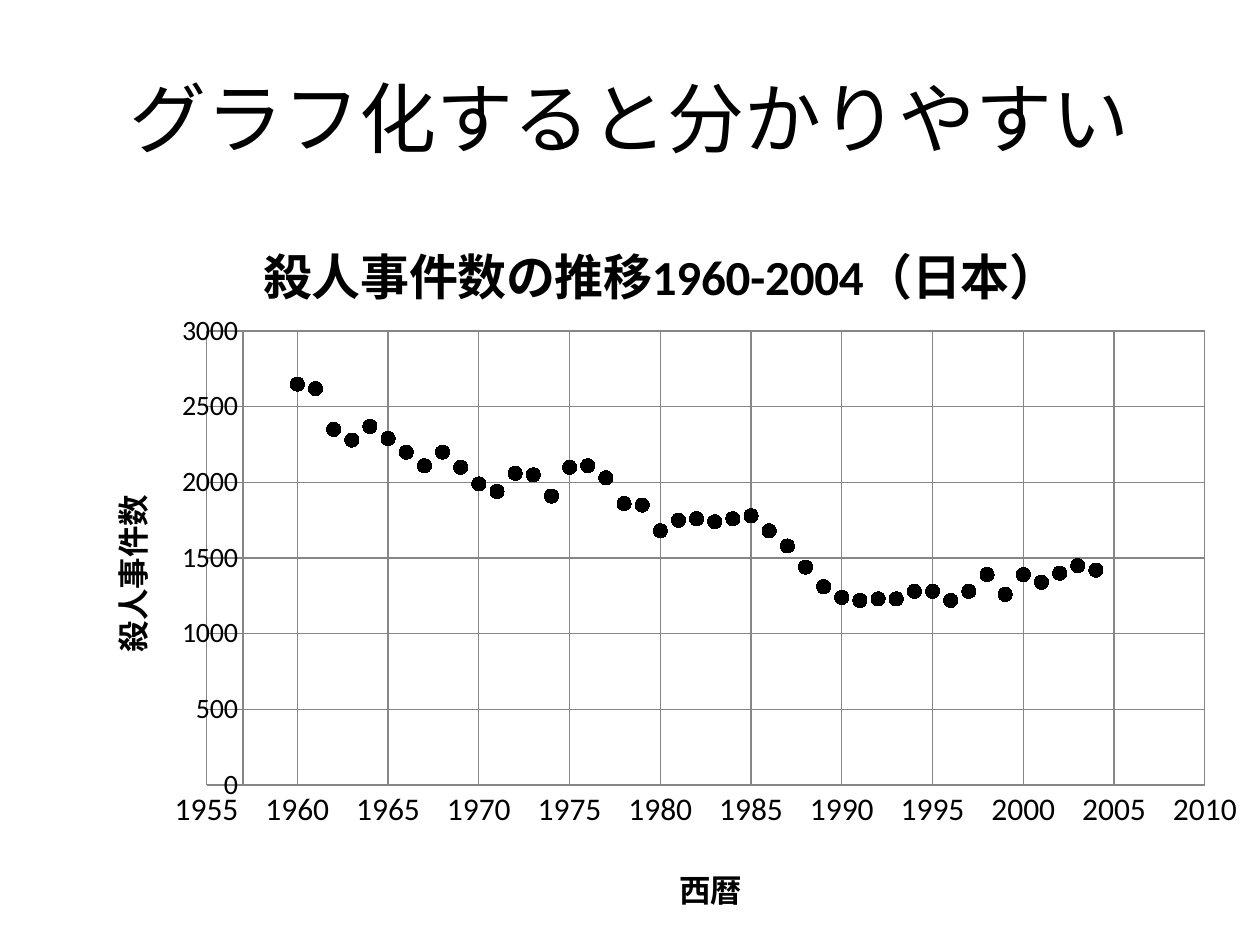
from lxml import etree
from pptx import Presentation
from pptx.chart.data import XyChartData
from pptx.dml.color import RGBColor
from pptx.enum import chart as charts, text
from pptx.oxml.ns import qn
from pptx.util import Inches, Pt

COLORS = {"ink": "000000", "grid": "868686"}
FONT = "Calibri"
FIRST_YEAR = 1960
CASES = [
    2650, 2620, 2350, 2280, 2370, 2290, 2200, 2110, 2200, 2100,
    1990, 1940, 2060, 2050, 1910, 2100, 2110, 2030, 1860, 1850,
    1680, 1750, 1760, 1740, 1760, 1780, 1680, 1580, 1440, 1310,
    1240, 1220, 1230, 1230, 1280, 1280, 1220, 1280, 1390, 1260,
    1390, 1340, 1400, 1450, 1420,
]


def color(name):
    return RGBColor.from_string(COLORS[name])


def format_font(font, size, bold=False):
    font.name = FONT
    font.size = Pt(size)
    font.bold = bold
    font.color.rgb = color("ink")


def write_text(frame, content, size, bold=False):
    paragraph = frame.paragraphs[0]
    paragraph.alignment = text.PP_ALIGN.CENTER
    run = paragraph.add_run()
    run.text = content
    format_font(run.font, size, bold)


def place(element, position, **values):
    """Give a chart part a manual layout, in fractions of the chart."""
    layout = element.find(qn("c:layout"))
    if layout is None:
        layout = etree.Element(qn("c:layout"))
        element.insert(position, layout)
    for child in list(layout):
        layout.remove(child)
    manual = etree.SubElement(layout, qn("c:manualLayout"))
    for tag, value in values.items():
        etree.SubElement(manual, qn("c:" + tag)).set("val", str(value))


def add_chart_title(title, content, size, x, y):
    write_text(title.text_frame, content, size, bold=True)
    place(title._element, 1, xMode="edge", yMode="edge", x=x, y=y)


def format_axis(axis, low, high, step, size):
    axis.minimum_scale, axis.maximum_scale, axis.major_unit = low, high, step
    axis.major_tick_mark = axis.minor_tick_mark = charts.XL_TICK_MARK.NONE
    axis.has_major_gridlines = True
    for line in (axis.major_gridlines.format.line, axis.format.line):
        line.color.rgb = color("grid")
        line.width = Pt(0.75)
    axis.tick_labels.number_format = "General"
    axis.tick_labels.number_format_is_linked = False
    format_font(axis.tick_labels.font, size)


def format_points(series):
    series.smooth = False
    series.format.line.fill.background()
    marker = series.marker
    marker.style = charts.XL_MARKER_STYLE.CIRCLE
    marker.size = 8
    marker.format.fill.solid()
    marker.format.fill.fore_color.rgb = color("ink")
    marker.format.line.color.rgb = color("ink")


def add_scatter_chart(slide):
    data = XyChartData()
    points = data.add_series("殺人事件数")
    for year, cases in enumerate(CASES, FIRST_YEAR):
        points.add_data_point(year, cases)
    chart = slide.shapes.add_chart(
        charts.XL_CHART_TYPE.XY_SCATTER, Inches(0.5), Inches(1.55),
        Inches(9.5), Inches(5.83), data).chart
    chart.has_legend = False
    format_font(chart.font, 10)
    chart.plots[0].vary_by_categories = False
    format_points(chart.plots[0].series[0])

    # Axes; the vertical one stands at 1957
    years, counts = chart.category_axis, chart.value_axis
    format_axis(years, 1955, 2010, 5, 18)
    format_axis(counts, 0, 3000, 500, 16)
    years.crosses_at = 1957

    # Titles
    chart.has_title = True
    add_chart_title(chart.chart_title, "殺人事件数の推移1960-2004（日本）", 28, 0.16, 0.04)
    add_chart_title(years.axis_title, "西暦", 18, 0.51, 0.9)
    add_chart_title(counts.axis_title, "殺人事件数", 18, 0.03, 0.4)
    body = counts.axis_title.text_frame._txBody.find(qn("a:bodyPr"))
    body.set("rot", "-5400000")
    body.set("vert", "horz")

    # Plot area
    plot_area = chart._chartSpace.find(".//" + qn("c:plotArea"))
    place(plot_area, 0, layoutTarget="inner", xMode="edge", yMode="edge",
          x=0.12, y=0.185, w=0.834, h=0.618)


def add_title(slide, content):
    title = slide.shapes.title
    title.left, title.top = Inches(0.5), Inches(0.3)
    title.width, title.height = Inches(9), Inches(1.25)
    title.text_frame.vertical_anchor = text.MSO_ANCHOR.MIDDLE
    write_text(title.text_frame, content, 44)


def main():
    presentation = Presentation()
    presentation.slide_width, presentation.slide_height = Inches(10), Inches(7.5)
    slide = presentation.slides.add_slide(presentation.slide_layouts[5])
    add_title(slide, "グラフ化すると分かりやすい")
    add_scatter_chart(slide)
    presentation.save("out.pptx")


if __name__ == "__main__":
    main()
